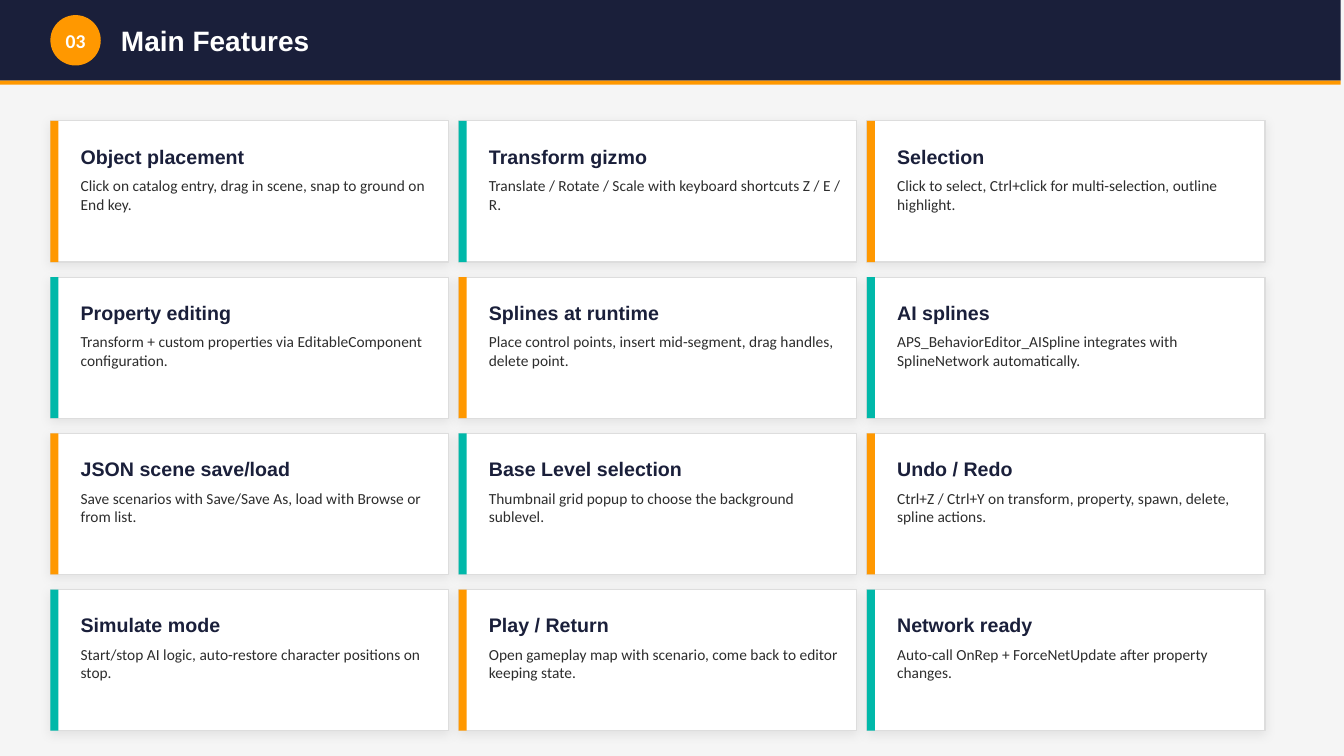
from dataclasses import dataclass

from lxml import etree
from pptx import Presentation
from pptx.dml.color import RGBColor
from pptx.enum.shapes import MSO_SHAPE
from pptx.enum.text import MSO_ANCHOR, PP_ALIGN
from pptx.oxml.ns import qn
from pptx.shapes.autoshape import Shape
from pptx.slide import Slide
from pptx.util import Pt

RECTANGLE, OVAL = MSO_SHAPE.RECTANGLE, MSO_SHAPE.OVAL
TOP, MIDDLE = MSO_ANCHOR.TOP, MSO_ANCHOR.MIDDLE
LEFT, CENTER = PP_ALIGN.LEFT, PP_ALIGN.CENTER

NAVY = RGBColor(0x1A, 0x1F, 0x3A)
ORANGE = RGBColor(0xFF, 0x98, 0x00)
TEAL = RGBColor(0x00, 0xB8, 0xA9)
WHITE = RGBColor(0xFF, 0xFF, 0xFF)
PALE_GRAY = RGBColor(0xF5, 0xF5, 0xF5)
BORDER_GRAY = RGBColor(0xDD, 0xDD, 0xDD)
BODY_GRAY = RGBColor(0x2D, 0x2D, 0x2D)

# Card grid, in points
COLUMNS = 3
GRID_LEFT, GRID_TOP = 36, 86.4
CARD_WIDTH, CARD_HEIGHT = 284.4, 100.8
COLUMN_GAP, ROW_GAP = 7.2, 10.8
ACCENT_WIDTH = 5.76
TEXT_INDENT, TEXT_WIDTH = 21.6, 255.6


@dataclass(frozen=True)
class Box:
    left: float
    top: float
    width: float
    height: float

    def lengths(self) -> tuple[Pt, Pt, Pt, Pt]:
        return Pt(self.left), Pt(self.top), Pt(self.width), Pt(self.height)


@dataclass(frozen=True)
class TextStyle:
    font: str
    size: float
    color: RGBColor
    bold: bool = False
    anchor: MSO_ANCHOR = MIDDLE
    align: PP_ALIGN = LEFT


@dataclass(frozen=True)
class Feature:
    title: str
    description: str


NUMBER_STYLE = TextStyle("Calibri", 14, WHITE, bold=True, align=CENTER)
HEADING_STYLE = TextStyle("Arial", 20, WHITE, bold=True)
TITLE_STYLE = TextStyle("Arial", 14, NAVY, bold=True)
DESCRIPTION_STYLE = TextStyle("Calibri", 11, BODY_GRAY, anchor=TOP)

FEATURES = [
    Feature("Object placement",
            "Click on catalog entry, drag in scene, snap to ground on End key."),
    Feature("Transform gizmo",
            "Translate / Rotate / Scale with keyboard shortcuts Z / E / R."),
    Feature("Selection",
            "Click to select, Ctrl+click for multi-selection, outline highlight."),
    Feature("Property editing",
            "Transform + custom properties via EditableComponent configuration."),
    Feature("Splines at runtime",
            "Place control points, insert mid-segment, drag handles, delete point."),
    Feature("AI splines",
            "APS_BehaviorEditor_AISpline integrates with SplineNetwork automatically."),
    Feature("JSON scene save/load",
            "Save scenarios with Save/Save As, load with Browse or from list."),
    Feature("Base Level selection",
            "Thumbnail grid popup to choose the background sublevel."),
    Feature("Undo / Redo",
            "Ctrl+Z / Ctrl+Y on transform, property, spawn, delete, spline actions."),
    Feature("Simulate mode",
            "Start/stop AI logic, auto-restore character positions on stop."),
    Feature("Play / Return",
            "Open gameplay map with scenario, come back to editor keeping state."),
    Feature("Network ready",
            "Auto-call OnRep + ForceNetUpdate after property changes."),
]


def add_filled(slide: Slide, box: Box, color: RGBColor,
               outline: MSO_SHAPE = RECTANGLE) -> Shape:
    shape = slide.shapes.add_shape(outline, *box.lengths())
    shape.shadow.inherit = False
    shape.fill.solid()
    shape.fill.fore_color.rgb = color
    shape.line.fill.background()
    return shape


def add_text(slide: Slide, box: Box, text: str, style: TextStyle) -> None:
    frame = slide.shapes.add_textbox(*box.lengths()).text_frame
    frame.word_wrap = True
    frame.vertical_anchor = style.anchor
    frame.margin_left = frame.margin_right = Pt(0)
    frame.margin_top = frame.margin_bottom = Pt(0)
    frame.text = text
    paragraph = frame.paragraphs[0]
    paragraph.alignment = style.align
    font = paragraph.runs[0].font
    font.name = style.font
    font.size = Pt(style.size)
    font.bold = style.bold
    font.color.rgb = style.color


def add_soft_shadow(shape: Shape) -> None:
    effects = shape.element.spPr.find(qn("a:effectLst"))
    shadow = etree.SubElement(
        effects, qn("a:outerShdw"), blurRad=str(Pt(8)), dist=str(Pt(2)),
        dir="5400000", algn="bl", rotWithShape="0")
    color = etree.SubElement(shadow, qn("a:srgbClr"), val="000000")
    etree.SubElement(color, qn("a:alpha"), val="8000")


def add_header(slide: Slide) -> None:
    add_filled(slide, Box(0, 0, 957.6, 57.6), NAVY)
    add_filled(slide, Box(0, 57.6, 957.6, 2.88), ORANGE)
    badge = Box(36, 10.8, 36, 36)
    add_filled(slide, badge, ORANGE, OVAL)
    add_text(slide, badge, "03", NUMBER_STYLE)
    add_text(slide, Box(86.4, 10.8, 792, 36), "Main Features", HEADING_STYLE)


def add_card(slide: Slide, feature: Feature, row: int, column: int) -> None:
    left = GRID_LEFT + column * (CARD_WIDTH + COLUMN_GAP)
    top = GRID_TOP + row * (CARD_HEIGHT + ROW_GAP)

    card = add_filled(slide, Box(left, top, CARD_WIDTH, CARD_HEIGHT), WHITE)
    card.line.color.rgb = BORDER_GRAY
    card.line.width = Pt(0.75)
    add_soft_shadow(card)

    # Accents alternate like a checkerboard
    accent = TEAL if (row + column) % 2 else ORANGE
    add_filled(slide, Box(left, top, ACCENT_WIDTH, CARD_HEIGHT), accent)

    text_left = left + TEXT_INDENT
    add_text(slide, Box(text_left, top + 10.8, TEXT_WIDTH, 28.8),
             feature.title, TITLE_STYLE)
    add_text(slide, Box(text_left, top + 39.6, TEXT_WIDTH, 57.6),
             feature.description, DESCRIPTION_STYLE)


def main() -> None:
    presentation = Presentation()
    presentation.slide_width = Pt(960)
    presentation.slide_height = Pt(540)
    slide = presentation.slides.add_slide(presentation.slide_layouts[6])
    slide.background.fill.solid()
    slide.background.fill.fore_color.rgb = PALE_GRAY

    add_header(slide)
    for index, feature in enumerate(FEATURES):
        add_card(slide, feature, *divmod(index, COLUMNS))

    presentation.save("out.pptx")


if __name__ == "__main__":
    main()
